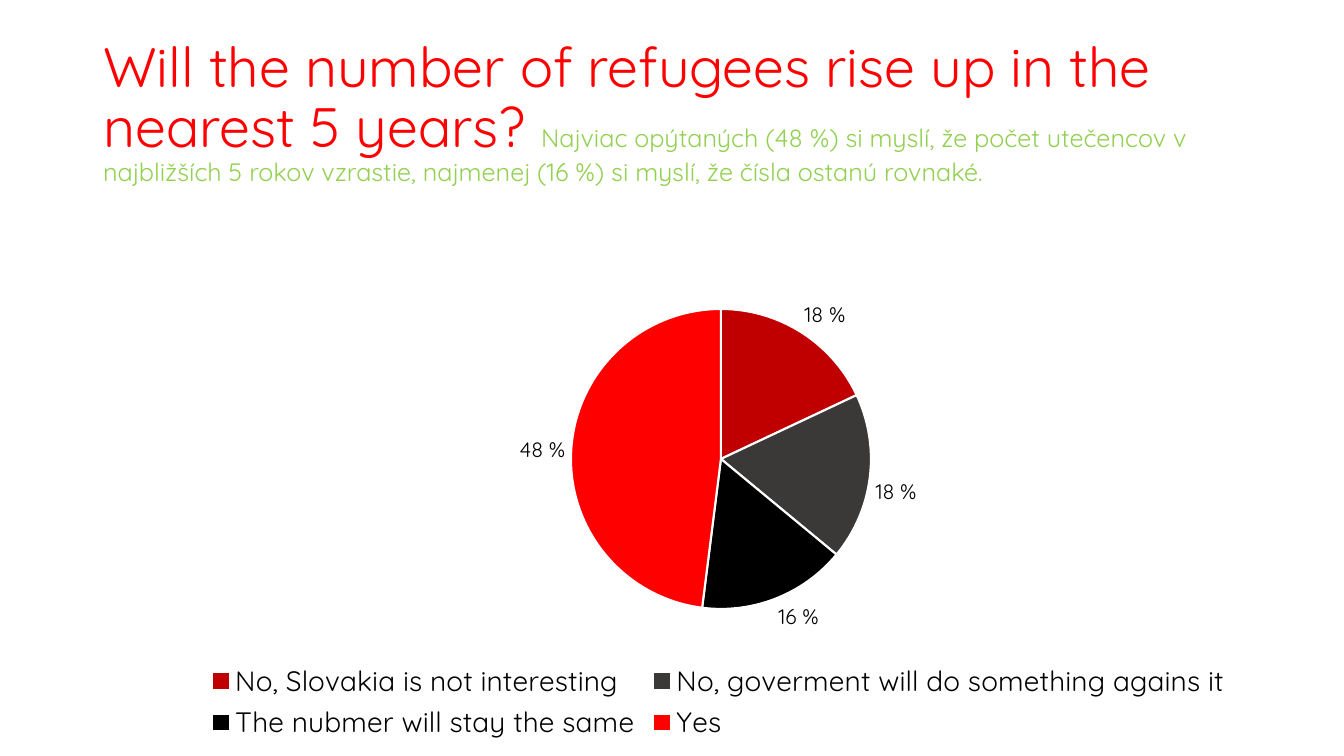
from lxml import etree
from pptx import Presentation
from pptx.chart.data import CategoryChartData
from pptx.dml.color import RGBColor
from pptx.enum.chart import XL_CHART_TYPE, XL_LABEL_POSITION, XL_LEGEND_POSITION
from pptx.enum.text import MSO_ANCHOR, MSO_AUTO_SIZE, PP_ALIGN
from pptx.oxml.ns import qn
from pptx.util import Pt

PIE = XL_CHART_TYPE.PIE
OUTSIDE = XL_LABEL_POSITION.OUTSIDE_END
BOTTOM = XL_LEGEND_POSITION.BOTTOM

RED = RGBColor(0xFF, 0x00, 0x00)
DARK_RED = RGBColor(0xC0, 0x00, 0x00)
GREY = RGBColor(0x3B, 0x38, 0x38)
BLACK = RGBColor(0x00, 0x00, 0x00)
WHITE = RGBColor(0xFF, 0xFF, 0xFF)
GREEN = RGBColor(0x92, 0xD0, 0x50)
FONT = "Quicksand"

# Content: text, size, colour
TITLE = [
    ("Will the number of refugees rise up in the nearest 5 years? ", 39.6, RED),
    ("Najviac opýtaných (48 %) si myslí, že počet utečencov v najbližších 5 rokov "
     "vzrastie, najmenej (16 %) si myslí, že čísla ostanú rovnaké.", 18, GREEN),
]
ANSWERS = [
    ("No, Slovakia is not interesting ", 18, DARK_RED),
    ("No, goverment will do something agains it", 18, GREY),
    ("The nubmer will stay the same", 16, BLACK),
    ("Yes", 48, RED),
]

# Places in px: left, top, width, height
PX = 9071
SLIDE = (1344, 756)
TITLE_BOX = (93, 40, 1159, 146)
CHART_BOX = (113, 275, 1211, 471)
PIE_BOX = (571, 309, 300, 300)


def emu(lengths):
    return [n * PX for n in lengths]


def style(font, size, color):
    font.name, font.size = FONT, Pt(size)
    font.color.rgb = color


prs = Presentation()
prs.slide_width, prs.slide_height = emu(SLIDE)
s = prs.slides.add_slide(prs.slide_layouts[5])

# Title with its Slovak summary
title = s.shapes.title
title.left, title.top, title.width, title.height = emu(TITLE_BOX)
tf = title.text_frame
tf.word_wrap = True
tf.auto_size = MSO_AUTO_SIZE.NONE
tf.vertical_anchor = MSO_ANCHOR.MIDDLE
p = tf.paragraphs[0]
p.alignment = PP_ALIGN.LEFT
p.line_spacing = 0.9
for text, size, color in TITLE:
    r = p.add_run()
    r.text = text
    style(r.font, size, color)

# Pie chart
data = CategoryChartData(number_format='0" %"')
data.categories = [name for name, _, _ in ANSWERS]
data.add_series("Series 1", [value for _, value, _ in ANSWERS])
chart = s.shapes.add_chart(PIE, *emu(CHART_BOX), data).chart
chart.has_title = False
style(chart.font, 10, BLACK)
plot = chart.plots[0]
plot.vary_by_categories = True
for i, (_, _, color) in enumerate(ANSWERS):
    fmt = plot.series[0].points[i].format
    fmt.fill.solid()
    fmt.fill.fore_color.rgb = color
    fmt.line.color.rgb = WHITE
    fmt.line.width = Pt(1.5)

# Labels and legend
plot.has_data_labels = True
labels = plot.data_labels
labels.show_value = True
labels.show_percentage = False
labels.number_format = '0" %"'
labels.number_format_is_linked = False
labels.position = OUTSIDE
style(labels.font, 15, BLACK)
chart.has_legend = True
chart.legend.position = BOTTOM
chart.legend.include_in_layout = False
style(chart.legend.font, 20, BLACK)

# Fixed place of the pie inside the chart
area = plot._element.getparent()
for old in area.findall(qn("c:layout")):
    area.remove(old)
layout = etree.Element(qn("c:layout"))
area.insert(0, layout)
manual = etree.SubElement(layout, qn("c:manualLayout"))
left, top, width, height = PIE_BOX
places = {
    "layoutTarget": "inner", "xMode": "edge", "yMode": "edge",
    "x": (left - CHART_BOX[0]) / CHART_BOX[2],
    "y": (top - CHART_BOX[1]) / CHART_BOX[3],
    "w": width / CHART_BOX[2],
    "h": height / CHART_BOX[3],
}
for tag, value in places.items():
    etree.SubElement(manual, qn("c:" + tag)).set("val", str(value))

prs.save("out.pptx")
